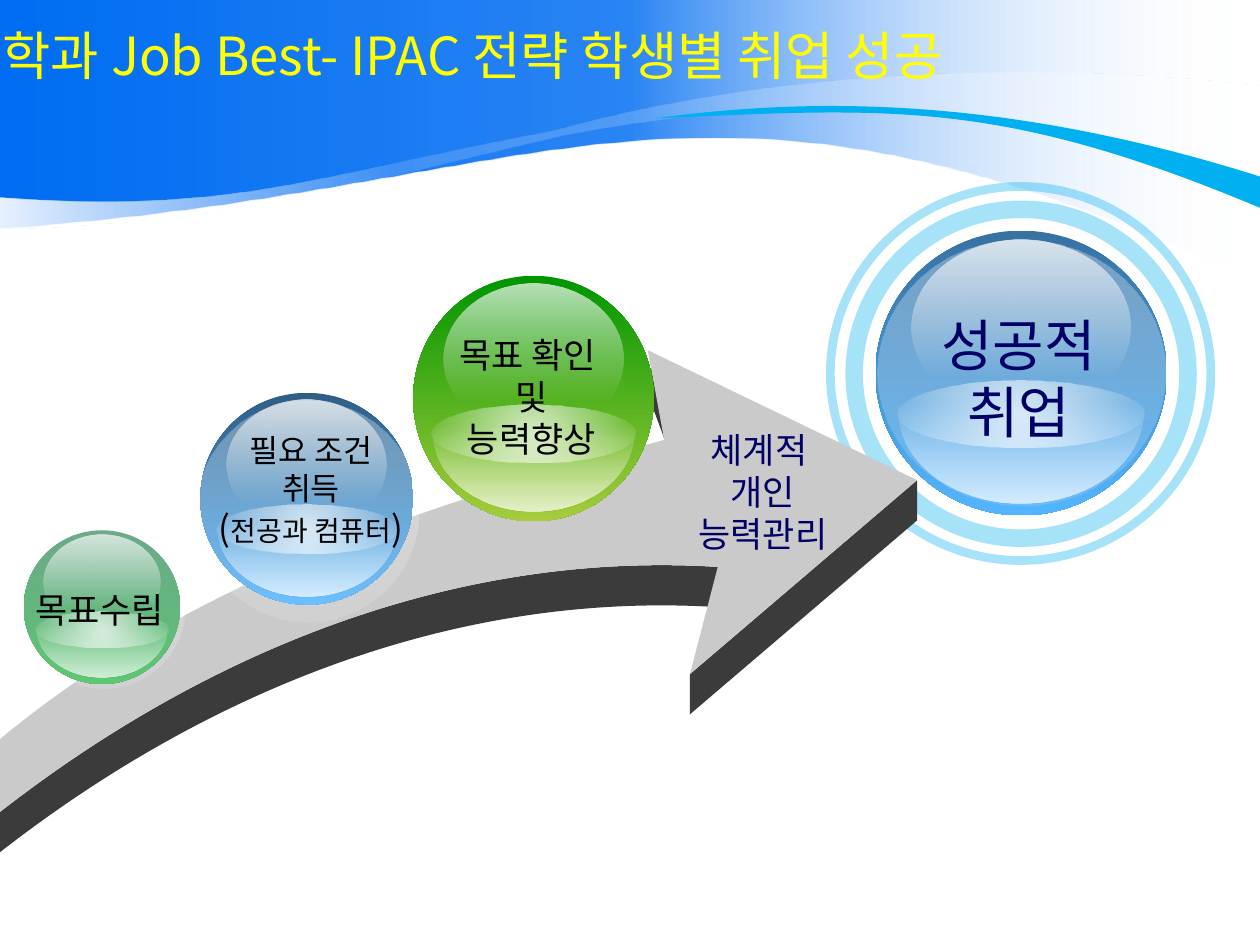
from lxml.etree import SubElement
from pptx import Presentation
from pptx.dml.color import RGBColor
from pptx.enum.shapes import MSO_SHAPE as SHAPE
from pptx.enum.text import MSO_ANCHOR as ANCHOR, MSO_AUTO_SIZE as FIT, PP_ALIGN as ALIGN
from pptx.oxml.ns import qn
from pptx.util import Cm, Pt

FONT = "Noto Sans CJK KR"
COLORS = {
    "white": "FFFFFF", "blue": "006DF2", "cyan": "00B0F0", "yellow": "FFFF00",
    "navy": "000066", "black": "000000", "face": "CACACA", "side": "3B3B3B",
    "goal_top": "3772A3", "need_top": "2E5E86", "sky": "53B5FF",
    "plan_top": "298354", "plan_low": "45BF5C", "check_top": "009600", "check_low": "A6CC3C",
}

# Gradient stops: position, colour, opacity (percent)
HEADER = [(0, "blue", 100), (50, "blue", 83), (100, "white", 0)]
VEIL = [(0, "white", 90), (31, "white", 16), (86, "white", 24)]
HALO = [(0, "white", 33), (100, "white", 13)]
# Glossy layers: left, top, width, height as shares of the ball, stops, angle (None is radial)
GLOSS = [
    ((0.125, 0.03, 0.75, 0.615), [(0, "white", 71), (78, "white", 0)], 90),
    ((0.075, 0.525, 0.85, 0.235), [(0, "white", 73), (100, "white", 6)], None),
    ((0.08, 0.315, 0.84, 0.645), [(46, "white", 0), (100, "white", 72)], 90),
]

# Outlines (cm): a segment is one point for a line, three for a cubic curve
WAVE = [[(25.4, 0)], [(0, 0)], [(0, 4.6)], [(11.4, 3.81), (13.84, 0.36), (25.4, 5.69)]]
WAVE_VEIL = [
    [(25.4, 1.75)], [(24.26, 1.6), (17.58, 0.86), (11.18, 2.62)], [(6.15, 3.56), (4.72, 4.29), (0, 3.96)],
    [(0, 4.6)], [(5.16, 4.39), (6.76, 3.78), (11.38, 2.72)], [(13.79, 2.29), (18.95, 1.4), (25.4, 3.53)],
]
BAND = [[(13.16, 2.39)], [(17.88, 2.18), (20.14, 1.98), (25.4, 4.19)],
        [(25.4, 3.56)], [(19.69, 1.75), (15.67, 2.06), (13.16, 2.39)]]
ARROW_HEAD = [(13.06, 7.06), (18.49, 9.68), (13.91, 13.59)]
ARROW_LOWER = [(14.47, 11.43), (9.2, 11.1), (4.2, 13.1), (0, 16.37)]
ARROW_FACE = [[(0, 14.9)], [(4, 11.6), (8.6, 10.2), (13.39, 8.87)], *([pt] for pt in ARROW_HEAD),
              ARROW_LOWER[:1], ARROW_LOWER[1:]]
SLIT = [[(13.12, 7.1)], [(13.69, 8.81)], [(13.41, 8.89)], [(13.14, 8.16)]]
DEPTH = 0.81


def rgb(name):
    return RGBColor.from_string(COLORS[name])


def set_alpha(color_el, opacity):
    SubElement(color_el, qn("a:alpha"), val=str(opacity * 1000))


def fill_gradient(sp, stops, angle=0):
    sp.fill.gradient()
    grad = sp._element.spPr.find(qn("a:gradFill"))
    for child in list(grad):
        grad.remove(child)
    gs_list = SubElement(grad, qn("a:gsLst"))
    for pos, color, opacity in stops:
        gs = SubElement(gs_list, qn("a:gs"), pos=str(pos * 1000))
        set_alpha(SubElement(gs, qn("a:srgbClr"), val=COLORS[color]), opacity)
    if angle is None:
        radial = SubElement(grad, qn("a:path"), path="circle")
        SubElement(radial, qn("a:fillToRect"), dict.fromkeys("ltrb", "50000"))
    else:
        SubElement(grad, qn("a:lin"), ang=str(angle * 60000), scaled="0")


def paint(sp, fill, angle=0):
    """Fill with a colour name or a list of gradient stops, without outline."""
    sp.shadow.inherit = False
    sp.line.fill.background()
    if isinstance(fill, str):
        sp.fill.solid()
        sp.fill.fore_color.rgb = rgb(fill)
    else:
        fill_gradient(sp, fill, angle)


def add_outline(s, contours, fill):
    """Freeform of closed contours; three-point segments become cubic curves."""
    builder = None
    for (start,), *segments in contours:
        x, y = map(Cm, start)
        if builder is None:
            builder = s.shapes.build_freeform(x, y, scale=1.0)
        else:
            builder.move_to(x, y)
        builder.add_line_segments([(Cm(px), Cm(py)) for seg in segments for px, py in seg], close=True)
    sp = builder.convert_to_shape()
    lines = iter(list(sp._element.iter(qn("a:lnTo"))))
    for seg in (seg for contour in contours for seg in contour[1:]):
        first, *rest = [next(lines) for _ in seg]
        if rest:
            first.tag = qn("a:cubicBezTo")
            for line in rest:
                first.append(line[0])
                line.getparent().remove(line)
    paint(sp, fill)


def add_ellipse(s, box, fill, angle=90):
    sp = s.shapes.add_shape(SHAPE.OVAL, *map(Cm, box))
    paint(sp, fill, angle)


def add_ring(s, box, width):
    sp = s.shapes.add_shape(SHAPE.OVAL, *map(Cm, box))
    sp.shadow.inherit = False
    sp.fill.background()
    sp.line.width = Pt(width)
    sp.line.color.rgb = rgb("cyan")
    set_alpha(sp.line._ln.find(".//" + qn("a:srgbClr")), 35)


def add_ball(s, box, top, low, halo=None):
    x, y, w, h = box
    add_ellipse(s, box, [(0, top, 100), (100, low, 100)])
    for (fx, fy, fw, fh), stops, angle in GLOSS:
        add_ellipse(s, (x + fx * w, y + fy * h, fw * w, fh * h), stops, angle)
    if halo:
        add_ellipse(s, halo, HALO)


def write(tf, lines, color, align):
    """Each line is a list of (text, size) runs."""
    for i, runs in enumerate(lines):
        p = tf.paragraphs[0] if i == 0 else tf.add_paragraph()
        p.alignment = align
        for text, size in runs:
            r = p.add_run()
            r.text = text
            for name, value in {"size": Pt(size), "name": FONT, "bold": False}.items():
                setattr(r.font, name, value)
            r.font.color.rgb = rgb(color)
            rpr = r._r.get_or_add_rPr()
            rpr.set("kern", "0")
            SubElement(rpr, qn("a:ea"), typeface=FONT)


def add_label(s, box, lines, color="black"):
    tf = s.shapes.add_textbox(*map(Cm, box)).text_frame
    tf.word_wrap = False
    tf.vertical_anchor = ANCHOR.MIDDLE
    write(tf, lines, color, ALIGN.CENTER)


def add_title(s, text):
    sp = s.shapes.title
    s.shapes._spTree.append(sp._element)  # in front of the header waves
    box = {"left": -0.2, "top": -0.2, "width": 23.72, "height": 2.59}
    for name, value in box.items():
        setattr(sp, name, Cm(value))
    tf = sp.text_frame
    for name, value in {"word_wrap": True, "auto_size": FIT.NONE, "vertical_anchor": ANCHOR.MIDDLE}.items():
        setattr(tf, name, value)
    write(tf, [[(text, 30)]], "yellow", ALIGN.LEFT)


def add_arrow(s):
    def drop(points):
        return [(x, y + DEPTH) for x, y in points]

    shaft, edge = ARROW_LOWER, ARROW_HEAD[1:]
    back = drop(shaft)[::-1]
    shaft_side = [shaft[:1], shaft[1:], back[:1], back[1:]]
    head_side = [[pt] for pt in edge + drop(edge)[::-1]]
    add_outline(s, [shaft_side, head_side, SLIT], "side")
    add_outline(s, [ARROW_FACE], "face")
    add_label(s, (13.69, 8.31, 3.38, 3.2),
              [[("체계적 ", 20)], [("개인", 20)], [("능력관리", 20)]], "navy")


def main():
    prs = Presentation()
    prs.slide_width, prs.slide_height = Cm(25.4), Cm(19.05)
    s = prs.slides.add_slide(prs.slide_layouts[5])

    # Header
    for outline, fill in ((WAVE, HEADER), (WAVE_VEIL, VEIL), (BAND, "cyan")):
        add_outline(s, [outline], fill)
    add_title(s, "학과 Job Best- IPAC 전략 학생별 취업 성공")

    # Final goal
    add_ring(s, (17.22, 4.22, 6.73, 6.63), 10)
    add_ring(s, (16.74, 3.76, 7.67, 7.54), 5)
    add_ball(s, (17.65, 4.65, 5.87, 5.74), "goal_top", "sky", (17.7, 4.83, 5.79, 5.36))
    add_label(s, (18.12, 6.11, 4.83, 3), [[("성공적", 32)], [("취업", 32)]], "navy")

    add_arrow(s)

    # Steps along the arrow
    add_ball(s, (0.48, 10.69, 3.15, 3.1), "plan_top", "plan_low", (0.43, 10.64, 3.28, 3.25))
    add_label(s, (0.41, 11.86, 3.2, 0.86), [[("목표수립", 20)]])
    add_ball(s, (4.04, 7.92, 4.29, 4.27), "need_top", "sky", (3.96, 8.08, 4.47, 4.45))
    add_label(s, (3.77, 9.45, 5, 0.86),
              [[("필요 조건", 18)], [("취득", 18)], [("(", 20), ("전공과 컴퓨터", 16), (")", 20)]])
    add_ball(s, (8.33, 5.56, 4.85, 4.95), "check_top", "check_low")
    add_label(s, (8.53, 6.68, 4.37, 2.64), [[("목표 확인 ", 20)], [("및", 20)], [("능력향상", 20)]])

    prs.save("out.pptx")


if __name__ == "__main__":
    main()
